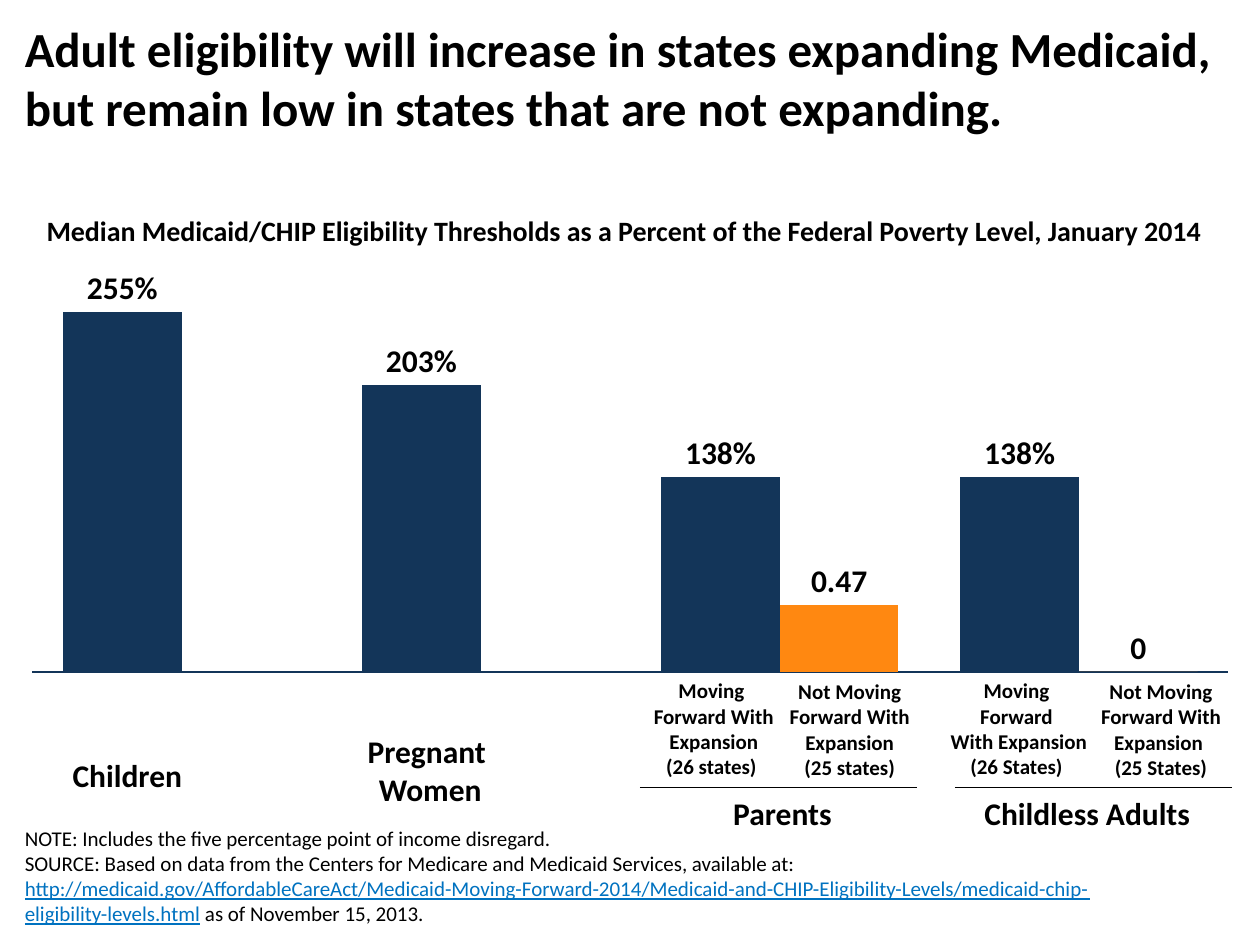
from dataclasses import dataclass
from typing import Any

from lxml import etree
from pptx import Presentation
from pptx import util as u
from pptx.chart.data import CategoryChartData
from pptx.dml.color import RGBColor
from pptx.enum import chart as ch, shapes, text
from pptx.oxml import parse_xml
from pptx.oxml.ns import nsdecls, qn

COLORS = {"ink": "000000", "navy": "133559", "orange": "FF8811", "link": "0072C0"}
URL = ("http://medicaid.gov/AffordableCareAct/Medicaid-Moving-Forward-2014/"
       "Medicaid-and-CHIP-Eligibility-Levels/medicaid-chip-eligibility-levels.html")
CENTER, LEFT = text.PP_ALIGN.CENTER, text.PP_ALIGN.LEFT
TOP, MIDDLE, BOTTOM = (text.MSO_ANCHOR.TOP, text.MSO_ANCHOR.MIDDLE,
                       text.MSO_ANCHOR.BOTTOM)


def rgb(name):
    return RGBColor.from_string(COLORS[name])


@dataclass
class Deck:
    """Style and current slide, with one method for each kind of element."""
    s: Any
    face: str = "Calibri"

    def style(self, font, size, bold=True):
        font.name, font.size, font.bold = self.face, u.Pt(size), bold
        font.color.rgb = rgb("ink")

    def text(self, box, paragraphs, size, bold=True, align=CENTER, anchor=TOP):
        tf = self.s.shapes.add_textbox(*map(u.Cm, box)).text_frame
        tf.word_wrap, tf.vertical_anchor = True, anchor
        for i, runs in enumerate(paragraphs):
            p = tf.add_paragraph() if i else tf.paragraphs[0]
            p.alignment = align
            self.style(p.font, size, bold)
            for words in [runs] if isinstance(runs, str) else runs:
                r = p.add_run()
                r.text = words
                if words == URL:
                    r.font.color.rgb, r.font.underline = rgb("link"), True

    def rule(self, x1, x2, y):
        sp = self.s.shapes.add_connector(
            shapes.MSO_CONNECTOR.STRAIGHT, *map(u.Cm, (x1, y, x2, y)))
        sp.line.color.rgb, sp.line.width = rgb("ink"), u.Pt(0.75)
        etree.SubElement(sp.element.spPr, qn("a:effectLst"))

    def columns(self, box, categories, series, top, gap, plot_box):
        data = CategoryChartData()
        data.categories = categories
        for name, values, _, _ in series:
            data.add_series(name, values)
        chart = self.s.shapes.add_chart(
            ch.XL_CHART_TYPE.COLUMN_CLUSTERED, *map(u.Cm, box), data).chart
        chart.has_legend = chart.has_title = False
        self.style(chart.font, 18)

        val, cat = chart.value_axis, chart.category_axis
        val.visible = val.has_major_gridlines = False
        val.minimum_scale, val.maximum_scale = 0, top
        cat.major_tick_mark = ch.XL_TICK_MARK.NONE
        cat.format.line.color.rgb = rgb("navy")
        cat.format.line.width = u.Pt(1)

        plot = chart.plots[0]
        plot.gap_width, plot.overlap, plot.vary_by_categories = gap, 0, False
        for ser, (_, _, color, fmt) in zip(plot.series, series):
            ser.format.fill.solid()
            ser.format.fill.fore_color.rgb = rgb(color)
            ser.invert_if_negative = False
            labels = ser.data_labels
            labels.show_value = True
            labels.position = ch.XL_LABEL_POSITION.OUTSIDE_END
            labels.number_format, labels.number_format_is_linked = fmt, False
            self.style(labels.font, 18)

        area = chart.element.find(".//" + qn("c:plotArea"))
        for old in area.findall(qn("c:layout")):
            area.remove(old)
        modes = "".join(f'<c:{k}Mode val="edge"/>' for k in "xy")
        sizes = "".join(f'<c:{k} val="{v}"/>' for k, v in zip("xywh", plot_box))
        area.insert(0, parse_xml(
            f'<c:layout {nsdecls("c")}><c:manualLayout>'
            f'<c:layoutTarget val="inner"/>{modes}{sizes}'
            f'</c:manualLayout></c:layout>'))


def main():
    prs = Presentation()
    prs.slide_width, prs.slide_height = u.Cm(25.4), u.Cm(19.05)
    deck = Deck(prs.slides.add_slide(prs.slide_layouts[6]))

    deck.columns(
        (0.25, 3.81, 24.89, 13.21), ["", "", " ", " "],
        [("Series 1", (2.55, 2.03, 1.38, 1.38), "navy", "0%"),
         ("Series 2", (None, None, 0.47, 0), "orange", "General")],
        top=3, gap=52, plot_box=(0.016, 0.091, 0.969, 0.646))

    deck.text((0.25, 0.25, 24.89, 2.54),
              ["Adult eligibility will increase in states expanding Medicaid, "
               "but remain low in states that are not expanding."],
              28, align=LEFT)
    deck.text((0.69, 3.38, 24.89, 2.54),
              ["Median Medicaid/CHIP Eligibility Thresholds as a Percent of the "
               "Federal Poverty Level, January 2014"],
              16, align=LEFT, anchor=MIDDLE)
    deck.text((0.25, 17.27, 23.11, 1.52),
              ["NOTE: Includes the five percentage point of income disregard.",
               ("SOURCE: Based on data from the Centers for Medicare and "
                "Medicaid Services, available at: ",
                URL, " as of November 15, 2013.")],
              12, bold=False, align=LEFT, anchor=BOTTOM)

    groups = [(0.2, 15.11, 4.88, ["Children "]),
              (5.92, 14.63, 5.51, ["Pregnant ", "Women"]),
              (13.77, 15.88, 4.01, ["Parents"]),
              (19.48, 15.88, 4.88, ["Childless Adults"])]
    for x, y, w, lines in groups:
        deck.text((x, y, w, 0.25 + 0.77 * len(lines)), lines, 18)

    bars = [(12.7, 13.54, 3.38,
             ["Moving ", "Forward With Expansion", "(26 states) "]),
            (15.44, 13.56, 3.38,
             ["Not Moving Forward With Expansion", "(25 states)"]),
            (18.85, 13.54, 3.38,
             ["Moving ", "Forward ", "With Expansion", "(26 States) "]),
            (21.41, 13.56, 3.99,
             ["Not Moving Forward With Expansion ", "(25 States)"])]
    for x, y, w, lines in bars:
        deck.text((x, y, w, 2.31), lines, 12)

    for x in (12.9, 19.25):
        deck.rule(x, x + 5.59, 15.88)

    prs.save("out.pptx")


if __name__ == "__main__":
    main()
